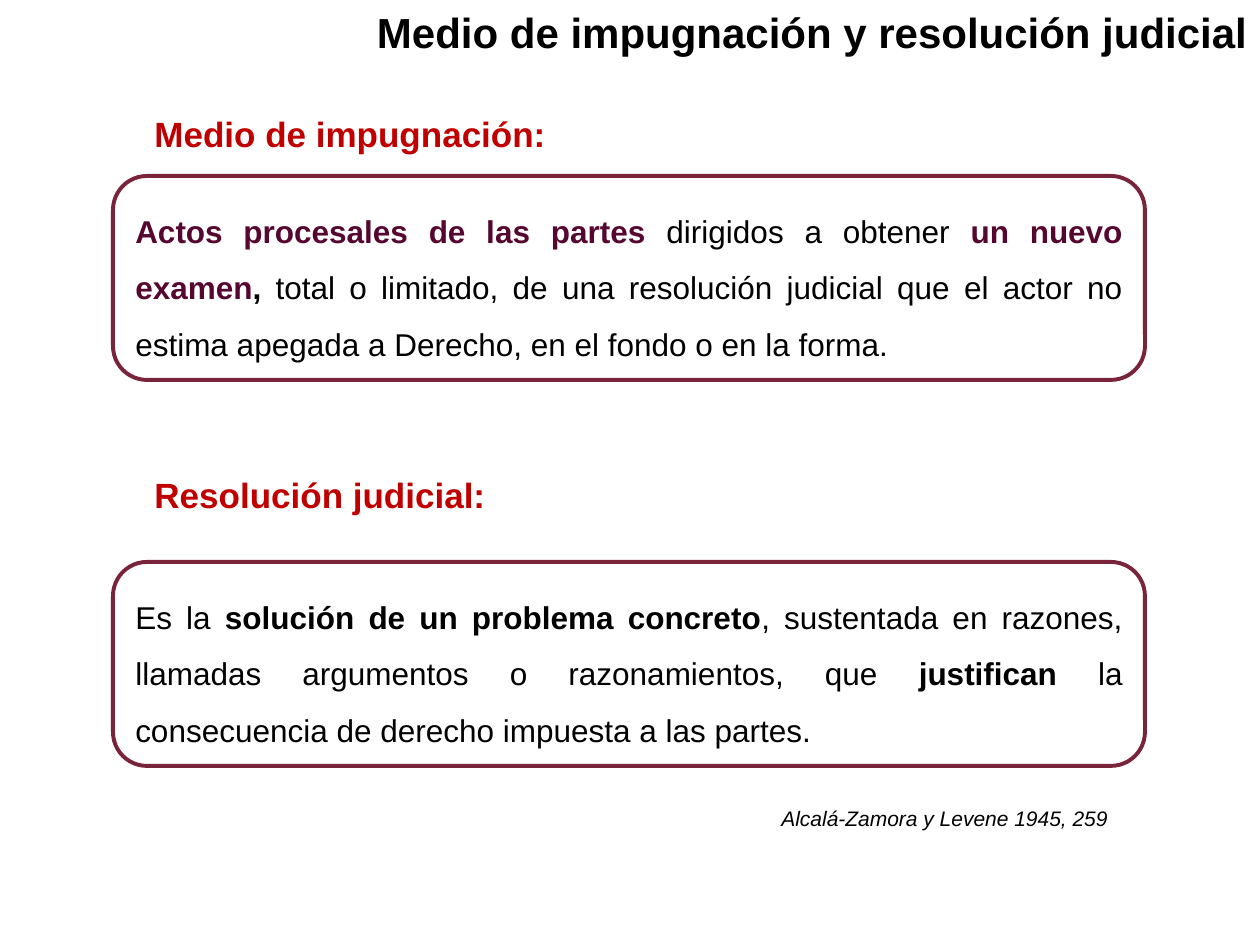
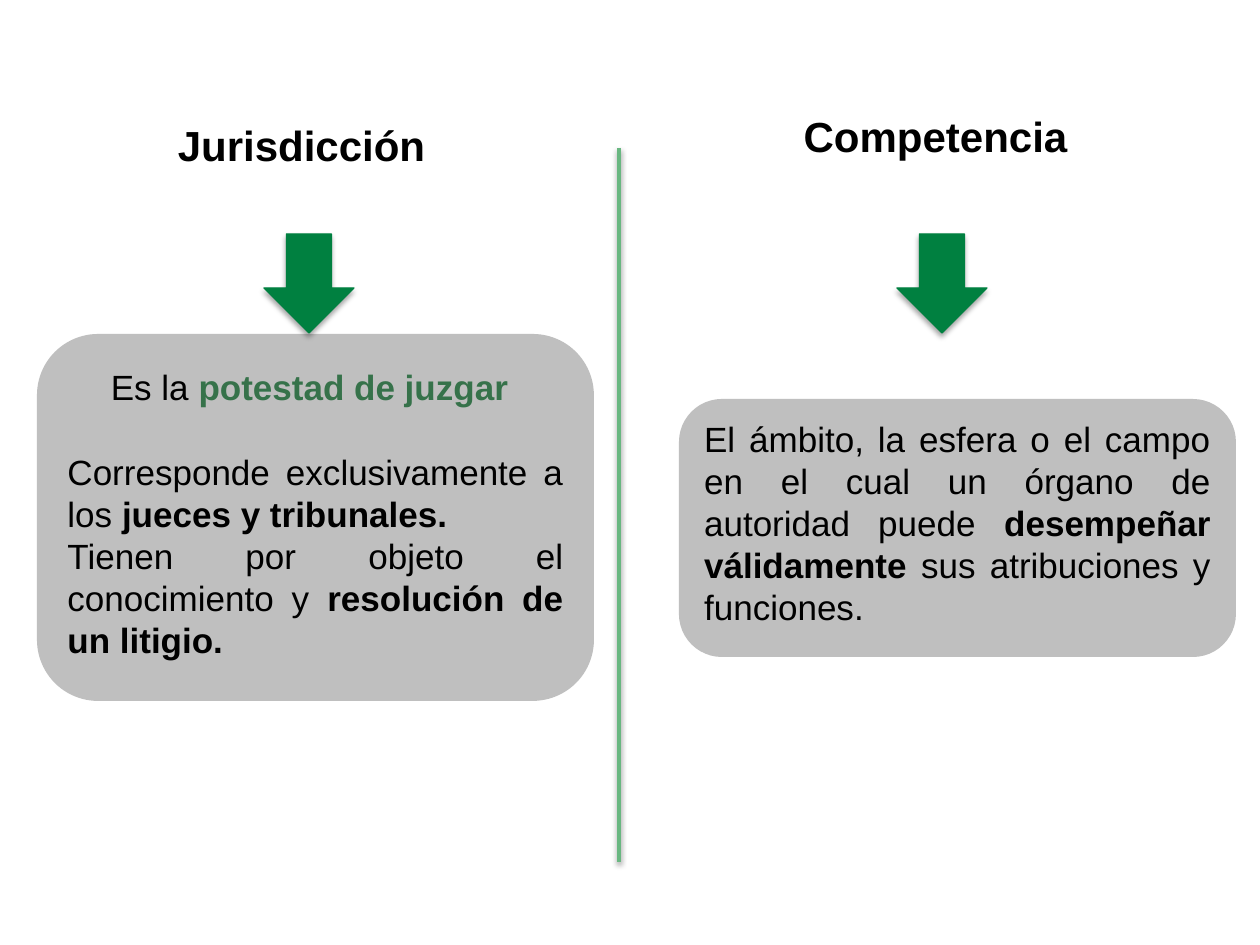
import lxml.etree
import pptx
import pptx.dml.color
import pptx.enum.shapes
import pptx.enum.text
import pptx.oxml.ns
import pptx.util

RGB = pptx.dml.color.RGBColor
ALIGN = pptx.enum.text.PP_ALIGN
ANCHOR = pptx.enum.text.MSO_ANCHOR
SHAPE = pptx.enum.shapes.MSO_SHAPE

BLACK = RGB(0x00, 0x00, 0x00)
RED = RGB(0xC0, 0x00, 0x00)
PLUM = RGB(0x56, 0x07, 0x30)
WINE = RGB(0x7A, 0x24, 0x3B)
GREY = RGB(0xBF, 0xBF, 0xBF)
GREEN = RGB(0x00, 0x80, 0x40)
LIGHT_GREEN = RGB(0x69, 0xB7, 0x81)
TEXT_GREEN = RGB(0x36, 0x72, 0x4A)

FONT = "Arial"
HEADING_SIZE = 24
PX_PER_INCH = 126
BOLD = {"bold": True}


def px(length):
    return pptx.util.Emu(round(length * 914400 / PX_PER_INCH))


def place(shape, left, top, width, height):
    shape.left, shape.top = px(left), px(top)
    shape.width, shape.height = px(width), px(height)


def add_xml(parent, tag, **attributes):
    child = lxml.etree.SubElement(parent, pptx.oxml.ns.qn(tag))
    for name, value in attributes.items():
        child.set(name, str(value))
    return child


# Text: spans are (text, format changes) pairs
def write(box, spans, size=20, color=BLACK, bold=False, italic=False,
          align=ALIGN.LEFT, line_spacing=1.0, space_before=0):
    frame = box.text_frame
    para = frame.paragraphs[0]
    if para.runs:
        para = frame.add_paragraph()
    properties = para._p.get_or_add_pPr()
    properties.set("marL", "0")
    properties.set("indent", "0")
    add_xml(properties, "a:buNone")
    para.alignment = align
    para.line_spacing = line_spacing
    para.space_before = pptx.util.Pt(space_before)
    if isinstance(spans, str):
        spans = [(spans, {})]
    for text, changes in spans:
        look = {"size": size, "color": color, "bold": bold, "italic": italic, **changes}
        run = para.add_run()
        run.text = text
        run.font.name = FONT
        run.font.size = pptx.util.Pt(look["size"])
        run.font.bold = look["bold"]
        run.font.italic = look["italic"]
        run.font.color.rgb = look["color"]


def add_label(page, bounds, text, wrap=True, **text_format):
    box = page.shapes.add_textbox(*map(px, bounds))
    box.text_frame.word_wrap = wrap
    write(box, text, **text_format)


def fill_title(page, bounds, text):
    title = page.shapes.title
    place(title, *bounds)
    title.text_frame.word_wrap = False
    title.text_frame.auto_size = pptx.enum.text.MSO_AUTO_SIZE.NONE
    title.text_frame.vertical_anchor = ANCHOR.TOP
    write(title, text, size=HEADING_SIZE, bold=True, align=ALIGN.RIGHT)


def fill_heading(heading, bounds, text):
    place(heading, *bounds)
    heading.text_frame.vertical_anchor = ANCHOR.BOTTOM
    write(heading, text, size=HEADING_SIZE, bold=True, align=ALIGN.CENTER)


def fill_panel(panel, bounds):
    """Turn a body placeholder into a grey rounded panel."""
    place(panel, *bounds)
    geometry = add_xml(panel._element.spPr, "a:prstGeom", prst="roundRect")
    add_xml(geometry, "a:avLst")
    panel.fill.solid()
    panel.fill.fore_color.rgb = GREY
    panel.text_frame.auto_size = pptx.enum.text.MSO_AUTO_SIZE.NONE
    panel.text_frame.vertical_anchor = ANCHOR.TOP


# Drawn shapes
def add_definition(page, top, spans):
    box = page.shapes.add_shape(SHAPE.ROUNDED_RECTANGLE, *map(px, (113, top, 1032, 204)))
    box.shadow.inherit = False
    box.fill.background()
    box.line.color.rgb = WINE
    box.line.width = pptx.util.Pt(2.25)
    box.text_frame.word_wrap = True
    box.text_frame.vertical_anchor = ANCHOR.MIDDLE
    write(box, spans, size=18, align=ALIGN.JUSTIFY, line_spacing=1.5)


def cast_shadow(shape, opacity, distance):
    effects = add_xml(shape._element.spPr, "a:effectLst")
    shadow = add_xml(effects, "a:outerShdw", blurRad=pptx.util.Pt(3.1),
                     dist=pptx.util.Pt(distance), dir=90 * 60000, rotWithShape=0)
    color = add_xml(shadow, "a:srgbClr", val=BLACK)
    add_xml(color, "a:alpha", val=opacity * 1000)


def add_down_arrow(page, left):
    arrow = page.shapes.add_shape(SHAPE.DOWN_ARROW, *map(px, (left, 234, 90, 99)))
    arrow.fill.solid()
    arrow.fill.fore_color.rgb = GREEN
    arrow.line.color.rgb = GREEN
    arrow.line.width = pptx.util.Pt(0.75)
    cast_shadow(arrow, 35, 1.8)


def add_divider(page, x, top, bottom):
    divider = page.shapes.add_connector(
        pptx.enum.shapes.MSO_CONNECTOR.STRAIGHT, px(x), px(top), px(x), px(bottom))
    divider.line.color.rgb = LIGHT_GREEN
    divider.line.width = pptx.util.Pt(2)
    cast_shadow(divider, 38, 1.6)


# Slides
def build_definitions(deck):
    page = deck.slides.add_slide(deck.slide_layouts.get_by_name("Title Only"))
    fill_title(page, (357, 0, 903, 64), "Medio de impugnación y resolución judicial")

    add_label(page, (142, 106, 417, 55), "Medio de impugnación:", color=RED, bold=True)
    key = {"bold": True, "color": PLUM}
    add_definition(page, 176, [
        ("Actos procesales de las partes", key),
        (" dirigidos a obtener ", {}),
        ("un nuevo examen", key),
        (",", BOLD),
        (" total o limitado, de una resolución judicial que el actor no estima "
         "apegada a Derecho, en el fondo o en la forma.", {}),
    ])

    add_label(page, (142, 467, 358, 55), "Resolución judicial:", color=RED, bold=True)
    add_definition(page, 562, [
        ("Es la ", {}),
        ("solución de un problema concreto", BOLD),
        (", sustentada en razones, llamadas argumentos o razonamientos, que ", {}),
        ("justifican", BOLD),
        (" la consecuencia de derecho impuesta a las partes.", {}),
    ])
    add_label(page, (769, 799, 354, 38), "Alcalá-Zamora y Levene 1945, 259",
              wrap=False, size=12, italic=True)


def build_comparison(deck):
    page = deck.slides.add_slide(deck.slide_layouts.get_by_name("Comparison"))
    title = page.shapes.title._element
    title.getparent().remove(title)
    left_heading, left_panel, right_heading, right_panel = page.placeholders

    # Jurisdiction
    fill_heading(left_heading, (23, 88, 557, 88), "Jurisdicción")
    fill_panel(left_panel, (37, 334, 557, 367))
    write(left_panel, [("Es la ", {}),
                       ("potestad de juzgar", {"bold": True, "color": TEXT_GREEN}),
                       (" ", {"size": 24})], align=ALIGN.CENTER)
    write(left_panel, [("Corresponde exclusivamente a los ", {}),
                       ("jueces y tribunales.", BOLD)],
          align=ALIGN.JUSTIFY, space_before=24)
    write(left_panel, [("Tienen por objeto el conocimiento y ", {}),
                       ("resolución de un litigio.", BOLD)], align=ALIGN.JUSTIFY)

    # Competence
    fill_heading(right_heading, (657, 79, 557, 88), "Competencia")
    fill_panel(right_panel, (679, 399, 557, 258))
    write(right_panel, [
        ("El ámbito, la esfera o el campo en el cual un órgano de autoridad puede ", {}),
        ("desempeñar válidamente ", BOLD),
        ("sus atribuciones y funciones.", {}),
    ], align=ALIGN.JUSTIFY)

    for left in (264, 897):
        add_down_arrow(page, left)
    add_divider(page, 619, 148, 862)


def main():
    deck = pptx.Presentation()
    deck.slide_width, deck.slide_height = px(1260), px(945)
    build_definitions(deck)
    build_comparison(deck)
    deck.save("out.pptx")


if __name__ == "__main__":
    main()
